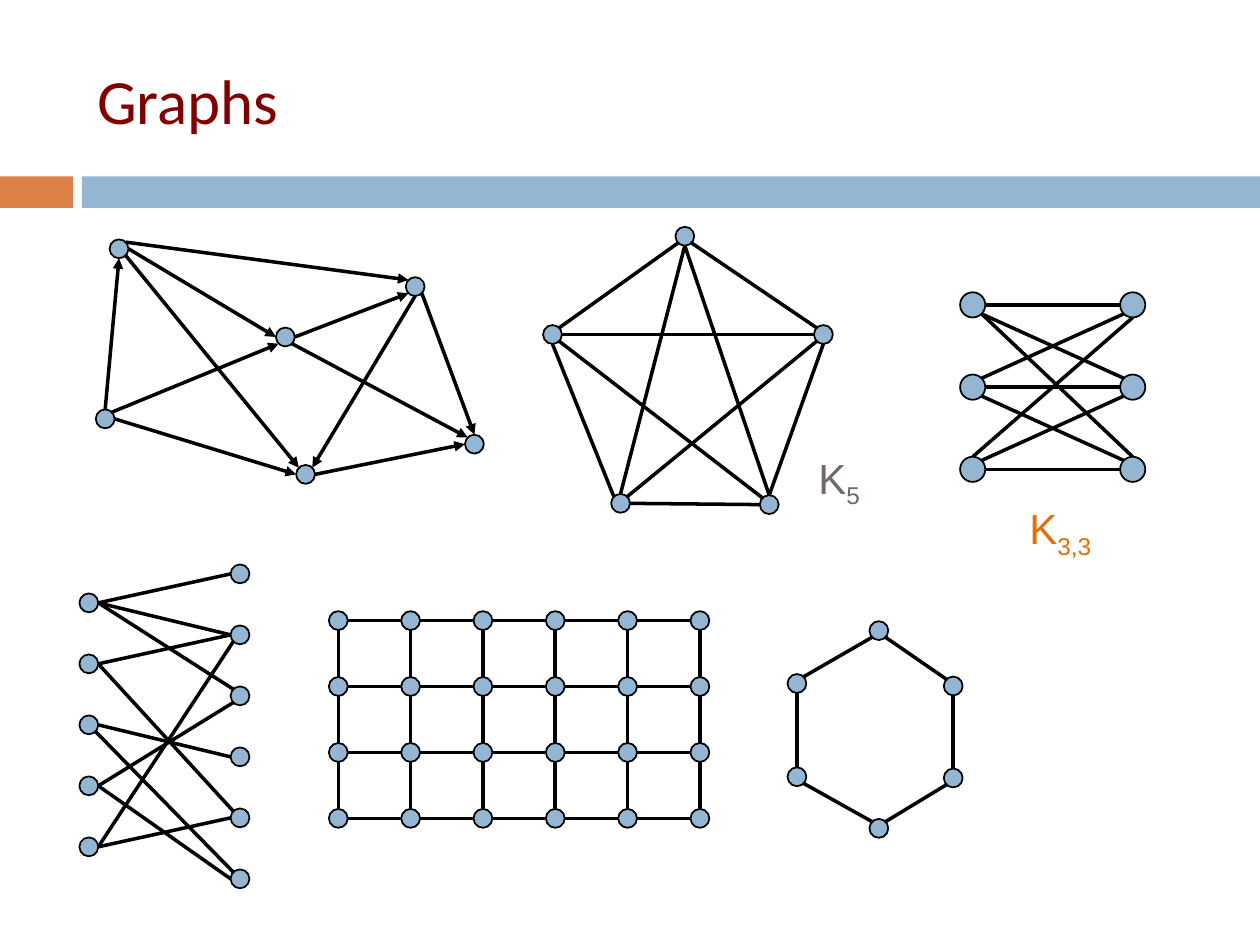
import math

import pptx
import pptx.util
import pptx.dml.color
import pptx.enum.shapes
import pptx.enum.text
import pptx.oxml.ns
import lxml.etree

COLORS = {"orange": "DD8047", "blue": "94B6D2", "black": "000000",
          "title": "800000", "gray": "726868", "label_orange": "E46C0A"}
WIDTH, HEIGHT = 10, 7.5
NODE, BIG_NODE = 0.15, 0.2
COMPASS = ["E", "SE", "S", "SW", "W", "NW", "N", "NE"]


def rgb(name):
    return pptx.dml.color.RGBColor.from_string(COLORS[name])


def place(box):
    """Turn a box in percent of the slide into lengths."""
    return [pptx.util.Inches(v * side / 100)
            for v, side in zip(box, (WIDTH, HEIGHT, WIDTH, HEIGHT))]


def add_filled(shapes, kind, frame, color):
    sp = shapes.add_shape(kind, *frame)
    sp.shadow.inherit = False
    sp.fill.solid()
    sp.fill.fore_color.rgb = rgb(color)
    sp.line.fill.background()
    return sp


def add_edge(shapes, start, end, arrow):
    line = shapes.add_connector(pptx.enum.shapes.MSO_CONNECTOR.STRAIGHT, *start, *end)
    line.line.color.rgb = rgb("black")
    line.line.width = pptx.util.Pt(2)
    qn = pptx.oxml.ns.qn
    if arrow:
        ln = line.line._get_or_add_ln()
        lxml.etree.SubElement(ln, qn("a:tailEnd"), type="triangle")
    lxml.etree.SubElement(line._element.spPr, qn("a:effectLst"))


def add_graph(s, box, nodes, edges, size=NODE, arrow=False):
    """Draw nodes at percent positions of the box; edges join "node.side" names."""
    left, top, width, height = place(box)
    dia = pptx.util.Inches(size)
    centers = {name: (left + width * x / 100, top + height * y / 100)
               for name, (x, y) in nodes.items()}

    def site(end):
        name, side = end.split(".")
        angle = COMPASS.index(side) * math.pi / 4
        x, y = centers[name]
        return round(x + dia / 2 * math.cos(angle)), round(y + dia / 2 * math.sin(angle))

    shapes = s.shapes.add_group_shape().shapes
    for edge in edges:
        start, end = edge.split()
        add_edge(shapes, site(start), site(end), arrow)
    for x, y in centers.values():
        frame = (round(x - dia / 2), round(y - dia / 2), dia, dia)
        sp = add_filled(shapes, pptx.enum.shapes.MSO_SHAPE.OVAL, frame, "blue")
        sp.line.color.rgb = rgb("black")
        sp.line.width = pptx.util.Pt(1)


def add_label(s, box, subscript, color):
    tf = s.shapes.add_textbox(*place(box)).text_frame
    tf.word_wrap = True
    tf.margin_left = tf.margin_right = tf.margin_top = tf.margin_bottom = 0
    p = tf.paragraphs[0]
    p.alignment = pptx.enum.text.PP_ALIGN.CENTER
    p.space_before = pptx.util.Pt(14)
    p.font.size = pptx.util.Pt(24)
    p.font.name = "Arial"
    p.font.color.rgb = rgb(color)
    p.add_run().text = "K"
    r = p.add_run()
    r.text = subscript
    r._r.get_or_add_rPr().set("baseline", "-25000")


def add_header(s, title_box, bar_top, bar_height):
    for left, width, color in ((0, 5.8, "orange"), (6.5, 93.5, "blue")):
        add_filled(s.shapes, pptx.enum.shapes.MSO_SHAPE.RECTANGLE,
                   place((left, bar_top, width, bar_height)), color)
    title = s.shapes.title
    title.left, title.top, title.width, title.height = place(title_box)
    tf = title.text_frame
    tf.text = "Graphs"
    tf.auto_size = pptx.enum.text.MSO_AUTO_SIZE.NONE
    tf.vertical_anchor = pptx.enum.text.MSO_ANCHOR.MIDDLE
    p = tf.paragraphs[0]
    p.alignment = pptx.enum.text.PP_ALIGN.LEFT
    p.font.size = pptx.util.Pt(36)
    p.font.name = "Calibri"
    p.font.color.rgb = rgb("title")


def add_directed(s, box):
    nodes = {"A": (3.75, 0), "B": (0, 75.4), "C": (48.8, 39.1),
             "D": (83.96, 16.76), "E": (54.27, 100), "F": (100, 86.6)}
    edges = ["A.E C.W", "B.N A.S", "A.SE E.NW", "C.E D.SW", "D.SE F.N", "D.S E.NE",
             "E.E F.W", "A.NE D.NW", "B.E E.W", "B.NE C.SW", "C.SE F.NW"]
    add_graph(s, box, nodes, edges, arrow=True)


def add_complete(s, box):
    nodes = {"Left": (0, 36.62), "Top": (48.84, 0), "Right": (100, 36.62),
             "FootL": (25.12, 99.53), "FootR": (80, 100)}
    edges = ["Left.NE Top.SW", "Left.S FootL.NW", "Top.SE Right.NW", "FootL.E FootR.W",
             "FootR.N Right.S", "Left.SE FootR.NW", "FootL.NE Right.SW",
             "Left.E Right.W", "FootL.N Top.S", "FootR.N Top.S"]
    add_graph(s, box, nodes, edges)


def add_complete_bipartite(s, box):
    nodes = {f"{side}{i}": (x, 50 * i) for side, x in (("L", 0), ("R", 100))
             for i in range(3)}
    edges = [f"L{i}.E R{i}.W" for i in range(3)]
    edges += [f"L{i}.SE R{i + 1}.NW" for i in range(2)]
    edges += [f"L{i + 1}.NE R{i}.SW" for i in range(2)]
    edges += ["L0.SE R2.N", "L2.N R0.S"]
    add_graph(s, box, nodes, edges, BIG_NODE)


def add_bipartite(s, box):
    nodes = {f"L{i}": (0, 9.5 + 20 * i) for i in range(5)}
    nodes.update({f"R{i}": (100, 20 * i) for i in range(6)})
    edges = ["L0.E R0.W", "L0.E R1.W", "L0.E R2.NW", "L1.E R1.W", "L1.E R4.NW",
             "L4.E R1.SW", "L2.E R3.W", "L3.E R5.W", "L3.E R2.SW", "L4.E R4.W",
             "L2.SE R5.NW"]
    add_graph(s, box, nodes, edges)


def add_lattice(s, box, cols=6, rows=4):
    nodes = {f"{r},{c}": (100 * c / (cols - 1), 100 * r / (rows - 1))
             for r in range(rows) for c in range(cols)}
    edges = [f"0,{c}.S {rows - 1},{c}.N" for c in range(cols)]
    edges += [f"{r},0.E {r},{cols - 1}.W" for r in range(rows)]
    add_graph(s, box, nodes, edges)


def add_cycle(s, box):
    nodes = {"UpL": (0, 26.75), "Top": (52.42, 0), "UpR": (100, 28.03),
             "LowL": (0, 73.89), "Foot": (52.42, 100), "LowR": (100, 74.52)}
    edges = ["UpL.NE Top.SW", "Foot.NE LowR.SW", "Top.SE UpR.NW", "LowR.N UpR.S",
             "LowL.N UpL.S", "Foot.NW LowL.SE"]
    add_graph(s, box, nodes, edges)


def main():
    prs = pptx.Presentation()
    prs.slide_width = pptx.util.Inches(WIDTH)
    prs.slide_height = pptx.util.Inches(HEIGHT)
    s = prs.slides.add_slide(prs.slide_layouts[5])
    add_header(s, (6.7, 3.33, 89.2, 14.4), 18.67, 3.33)
    add_bipartite(s, (7.05, 60.73, 12, 32.27))
    add_lattice(s, (26.85, 65.67, 28.7, 20.93))
    add_directed(s, (8.35, 26.33, 29.3, 23.87))
    add_complete(s, (43.85, 25, 21.5, 28.4))
    add_label(s, (61, 47.87, 11.2, 6.13), "5", "gray")
    add_complete_bipartite(s, (77.2, 32.27, 12.7, 17.4))
    add_label(s, (74.9, 53.2, 18.5, 5.2), "3,3", "label_orange")
    add_cycle(s, (63.25, 66.73, 12.4, 20.93))
    prs.save("out.pptx")


if __name__ == "__main__":
    main()
